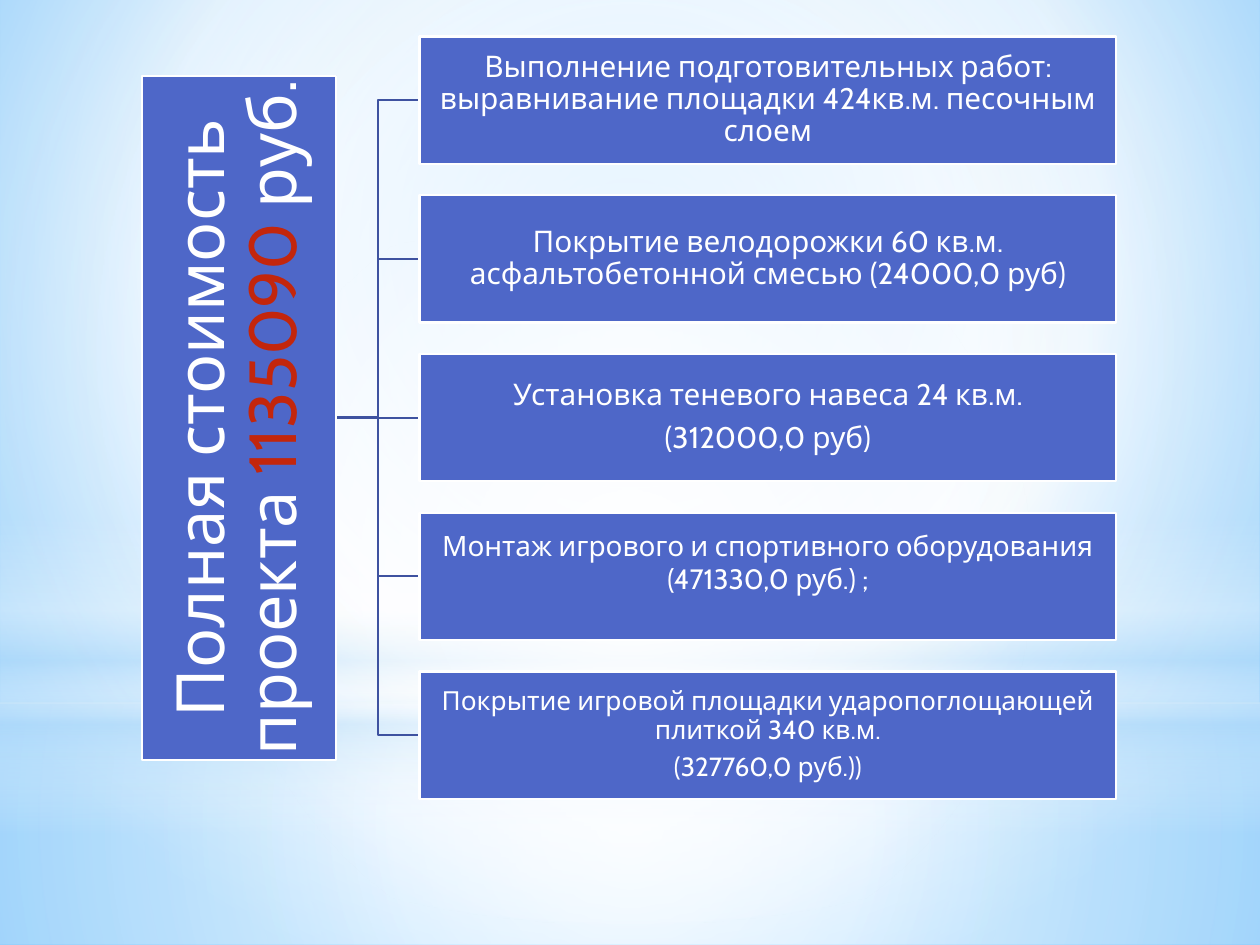
from lxml.etree import SubElement
from pptx import Presentation
from pptx.dml.color import RGBColor
from pptx.enum.shapes import MSO_CONNECTOR, MSO_SHAPE
from pptx.enum.text import MSO_ANCHOR, PP_ALIGN
from pptx.oxml import parse_xml
from pptx.oxml.ns import nsdecls, qn
from pptx.util import Inches, Pt

W, H = 10, 7.5
FONT = "Cabin"
BLUE, LINE, RED, WHITE, SKY = "4E67C8", "3E52A0", "C3260C", "FFFFFF", "B4DCFA"
CENTER = (50, 50, 50, 50)

BOX_LEFT, BOX_TOP, BOX_W, BOX_H, PITCH = 3.33, 0.29, 5.53, 1.01, 1.26
ROOT_LEFT, ROOT_W, ROOT_H = 1.13, 1.54, 5.43
MIDDLE = BOX_TOP + 2 * PITCH + BOX_H / 2

# paragraphs, text size, line spacing, bottom inset
COSTS = [
    (["Выполнение подготовительных работ: выравнивание площадки "
      "424кв.м. песочным слоем"], 17, 0.9, 0.01),
    (["Покрытие велодорожки 60 кв.м. асфальтобетонной смесью "
      "(24000,0 руб)"], 17, 0.9, 0.01),
    (["Установка теневого навеса 24 кв.м.", "(312000,0 руб)"], 17, 0.9, 0.01),
    (["Монтаж игрового и спортивного оборудования (471330,0 руб.) ;"],
     16, 1, 0.24),
    (["Покрытие игровой площадки ударопоглощающей плиткой 340 кв.м.",
      "(327760,0 руб.))"], 15, 0.9, 0.01),
]


def rgb(color):
    return RGBColor.from_string(color)


def set_gradient(fill, element, stops, to=None, angle=90):
    """Fill with (position, colour, opacity) stops: circular towards `to`, else linear."""
    fill.solid()
    stop_xml = "".join(
        f'<a:gs pos="{pos * 1000}"><a:srgbClr val="{color}">'
        f'<a:alpha val="{opacity * 1000}"/></a:srgbClr></a:gs>'
        for pos, color, opacity in stops)
    if to:
        sides = " ".join(f'{side}="{share * 1000}"' for side, share in zip("ltrb", to))
        direction = f'<a:path path="circle"><a:fillToRect {sides}/></a:path>'
    else:
        direction = f'<a:lin ang="{angle * 60000}" scaled="0"/>'
    gradient = parse_xml(f'<a:gradFill {nsdecls("a")} rotWithShape="1">'
                         f'<a:gsLst>{stop_xml}</a:gsLst>{direction}</a:gradFill>')
    solid = element.find(".//" + qn("a:solidFill"))
    solid.getparent().replace(solid, gradient)


def add_glow(s, kind, top, height, stops, to=None):
    sp = s.shapes.add_shape(kind, 0, Inches(top), Inches(W), Inches(height))
    sp.shadow.inherit = False
    sp.line.fill.background()
    set_gradient(sp.fill, sp.element, stops, to)


def add_backdrop(s):
    set_gradient(s.background.fill, s.element,
                 [(0, "9ED5FF", 100), (60, WHITE, 100), (100, "5BB9FF", 100)],
                 (20, 10, 20, 60))
    horizon = 5.58
    add_glow(s, MSO_SHAPE.RECTANGLE, horizon, H - horizon,
             [(0, WHITE, 91), (37, WHITE, 76), (100, SKY, 79)], CENTER)
    add_glow(s, MSO_SHAPE.RECTANGLE, 0, horizon,
             [(0, WHITE, 89), (48, WHITE, 62), (100, SKY, 79)], CENTER)
    add_glow(s, MSO_SHAPE.RECTANGLE, 4.12, 2.5,
             [(0, WHITE, 0), (29, WHITE, 30), (45, SKY, 40),
              (55, WHITE, 26), (65, SKY, 60), (100, WHITE, 0)])
    add_glow(s, MSO_SHAPE.OVAL, 1.75, horizon,
             [(0, WHITE, 100), (56, WHITE, 0)], CENTER)


def add_box(s, left, top, width, height, inset, bottom_inset):
    sp = s.shapes.add_shape(MSO_SHAPE.RECTANGLE, Inches(left), Inches(top),
                            Inches(width), Inches(height))
    sp.shadow.inherit = False
    sp.fill.solid()
    sp.fill.fore_color.rgb = rgb(BLUE)
    sp.line.color.rgb = rgb(WHITE)
    sp.line.width = Pt(1.25)
    tf = sp.text_frame
    tf.word_wrap = True
    tf.vertical_anchor = MSO_ANCHOR.MIDDLE
    tf.margin_left = tf.margin_right = tf.margin_top = Inches(inset)
    tf.margin_bottom = Inches(bottom_inset)
    return sp


def format_text(tf, size, spacing):
    for p in tf.paragraphs:
        p.alignment = PP_ALIGN.CENTER
        p.line_spacing = spacing
        p.space_after = Pt(round(size * 0.35))
        for r in p.runs:
            r.font.name = FONT
            r.font.size = Pt(size)
            r.font.color.rgb = rgb(WHITE)


def add_root(s):
    """Total cost, reading upwards: a wide box turned about its centre."""
    left = ROOT_LEFT + (ROOT_W - ROOT_H) / 2
    sp = add_box(s, left, MIDDLE - ROOT_W / 2, ROOT_H, ROOT_W, 0.03, 0.03)
    sp.rotation = 270
    p = sp.text_frame.paragraphs[0]
    for text in ("Полная стоимость проекта ", "1135090", " руб."):
        p.add_run().text = text
    format_text(sp.text_frame, 38, 0.9)
    p.runs[1].font.color.rgb = rgb(RED)


def add_cost(s, row, paragraphs, size, spacing, bottom_inset):
    sp = add_box(s, BOX_LEFT, BOX_TOP + row * PITCH, BOX_W, BOX_H, 0.01, bottom_inset)
    sp.text_frame.text = "\n".join(paragraphs)
    format_text(sp.text_frame, size, spacing)
    return sp


def add_branch(s, row):
    y = BOX_TOP + row * PITCH + BOX_H / 2
    kind = MSO_CONNECTOR.STRAIGHT if row == 2 else MSO_CONNECTOR.ELBOW
    branch = s.shapes.add_connector(kind, Inches(ROOT_LEFT + ROOT_W), Inches(MIDDLE),
                                    Inches(BOX_LEFT), Inches(y))
    branch.line.color.rgb = rgb(LINE)
    branch.line.width = Pt(1.25)
    SubElement(branch.element.spPr, qn("a:effectLst"))
    return branch


def main():
    prs = Presentation()
    prs.slide_width, prs.slide_height = Inches(W), Inches(H)
    s = prs.slides.add_slide(prs.slide_layouts[6])
    add_backdrop(s)
    branches = [add_branch(s, row) for row in range(len(COSTS))]
    add_root(s)
    boxes = [add_cost(s, row, *cost) for row, cost in enumerate(COSTS)]
    branches[2].end_connect(boxes[2], 1)
    prs.save("out.pptx")


if __name__ == "__main__":
    main()
